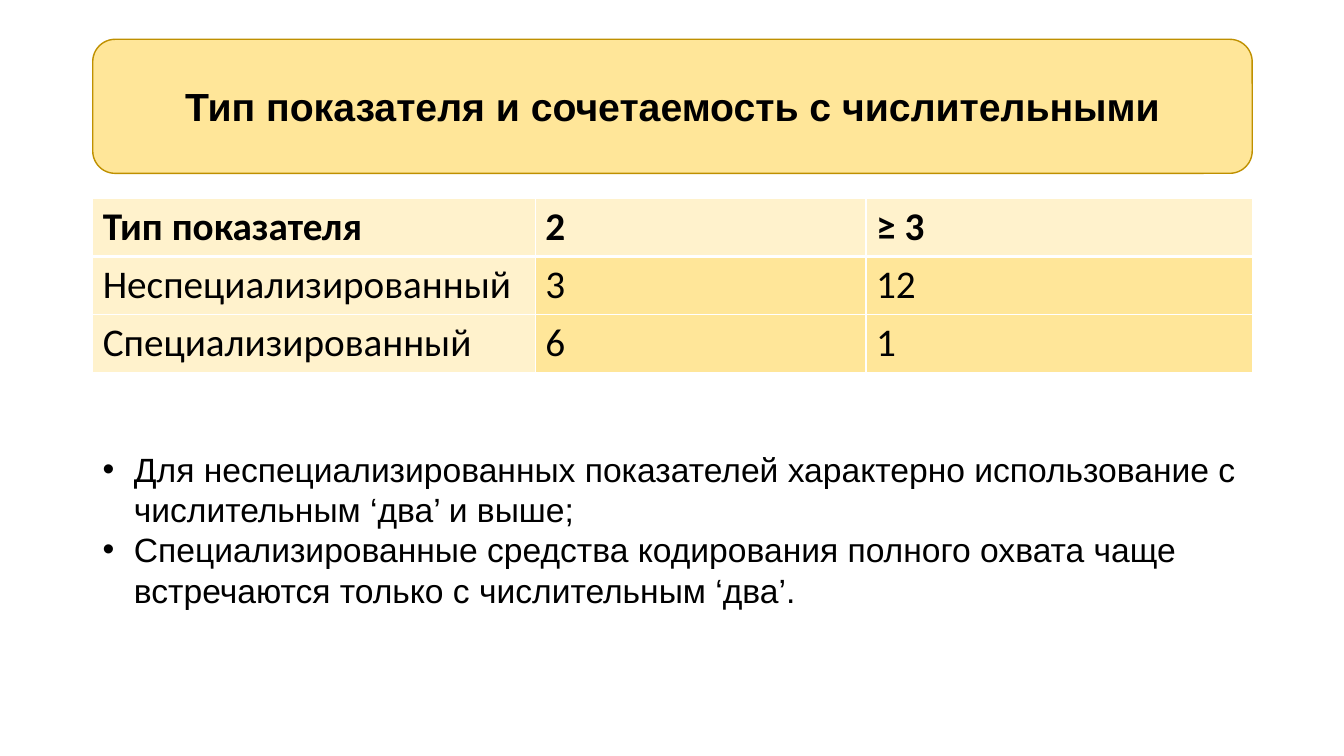
from dataclasses import dataclass

from lxml.etree import SubElement
from pptx import Presentation
from pptx.dml.color import RGBColor
from pptx.enum.shapes import MSO_SHAPE
from pptx.enum.text import MSO_ANCHOR, PP_ALIGN
from pptx.oxml.ns import qn
from pptx.util import Inches, Pt


@dataclass(frozen=True)
class Theme:
    ink: str = "000000"
    pale: str = "FFF2CC"
    gold: str = "FFE699"
    edge: str = "BF9000"
    rule: str = "FFFFFF"
    head: str = "Arial"
    body: str = "Calibri"
    large: int = 28
    small: int = 24


THEME = Theme()
WIDE, HIGH = 13.33, 7.5
LEFT, SPAN = 0.92, 11.5
COLS = (4.39, 3.28, 3.83)
ROW = 0.57
INDENT = 0.31

TITLE = "Тип показателя и сочетаемость с числительными"
ROWS = (
    ("Тип показателя", "2", "≥ 3"),
    ("Неспециализированный", "3", "12"),
    ("Специализированный", "6", "1"),
)
NOTES = (
    "Для неспециализированных показателей характерно использование "
    "с числительным ‘два’ и выше;",
    "Специализированные средства кодирования полного охвата чаще "
    "встречаются только с числительным ‘два’.",
)


def band(top, height):
    """Box across the content column."""
    return [Inches(v) for v in (LEFT, top, SPAN, height)]


def paint(item, color):
    item.fill.solid()
    item.fill.fore_color.rgb = RGBColor.from_string(color)


def write(par, text, face, size, bold=False):
    run = par.add_run()
    run.text = text
    style = {"name": face, "size": Pt(size), "bold": bold}
    for key, value in style.items():
        setattr(run.font, key, value)
    run.font.color.rgb = RGBColor.from_string(THEME.ink)


def border(cell, widths):
    """Draw cell rules; they must stand before the fill."""
    props = cell._tc.get_or_add_tcPr()
    for spot, (side, width) in enumerate(widths.items()):
        line = SubElement(props, qn(f"a:ln{side}"), w=str(Pt(width)))
        fill = SubElement(line, qn("a:solidFill"))
        SubElement(fill, qn("a:srgbClr"), val=THEME.rule)
        props.insert(spot, line)


def bullet(par):
    props = par._p.get_or_add_pPr()
    props.set("marL", str(Inches(INDENT)))
    props.set("indent", str(-Inches(INDENT)))
    SubElement(props, qn("a:buFont"), typeface=THEME.head)
    SubElement(props, qn("a:buChar"), char="•")


def add_grid(slide, top):
    frame = slide.shapes.add_table(
        len(ROWS), len(COLS), *band(top, ROW * len(ROWS)))
    table = frame.table
    for col, width in zip(table.columns, COLS):
        col.width = Inches(width)
    for r, texts in enumerate(ROWS):
        table.rows[r].height = Inches(ROW)
        for c, text in enumerate(texts):
            cell = table.cell(r, c)
            paint(cell, THEME.gold if r and c else THEME.pale)
            # The rule under the header is heavier
            border(cell, {"L": 1, "R": 1, "T": 3 if r == 1 else 1,
                          "B": 1 if r else 3})
            write(cell.text_frame.paragraphs[0], text,
                  THEME.body, THEME.large, r == 0)


def add_title(slide, top, height):
    box = slide.shapes.add_shape(
        MSO_SHAPE.ROUNDED_RECTANGLE, *band(top, height))
    box.shadow.inherit = False
    paint(box, THEME.gold)
    box.line.color.rgb = RGBColor.from_string(THEME.edge)
    box.line.width = Pt(1)
    box.text_frame.word_wrap = True
    box.text_frame.vertical_anchor = MSO_ANCHOR.MIDDLE
    par = box.text_frame.paragraphs[0]
    par.alignment = PP_ALIGN.CENTER
    write(par, TITLE, THEME.head, THEME.large, True)


def add_notes(slide, top, height):
    frame = slide.shapes.add_textbox(*band(top, height)).text_frame
    frame.word_wrap = True
    for n, text in enumerate(NOTES):
        par = frame.add_paragraph() if n else frame.paragraphs[0]
        bullet(par)
        write(par, text, THEME.head, THEME.small)


def main():
    deck = Presentation()
    deck.slide_width, deck.slide_height = Inches(WIDE), Inches(HIGH)
    slide = deck.slides.add_slide(deck.slide_layouts[6])
    # Table, then title band, then findings
    add_grid(slide, 1.97)
    add_title(slide, 0.39, 1.33)
    add_notes(slide, 4.4, 1.72)
    deck.save("out.pptx")


if __name__ == "__main__":
    main()
